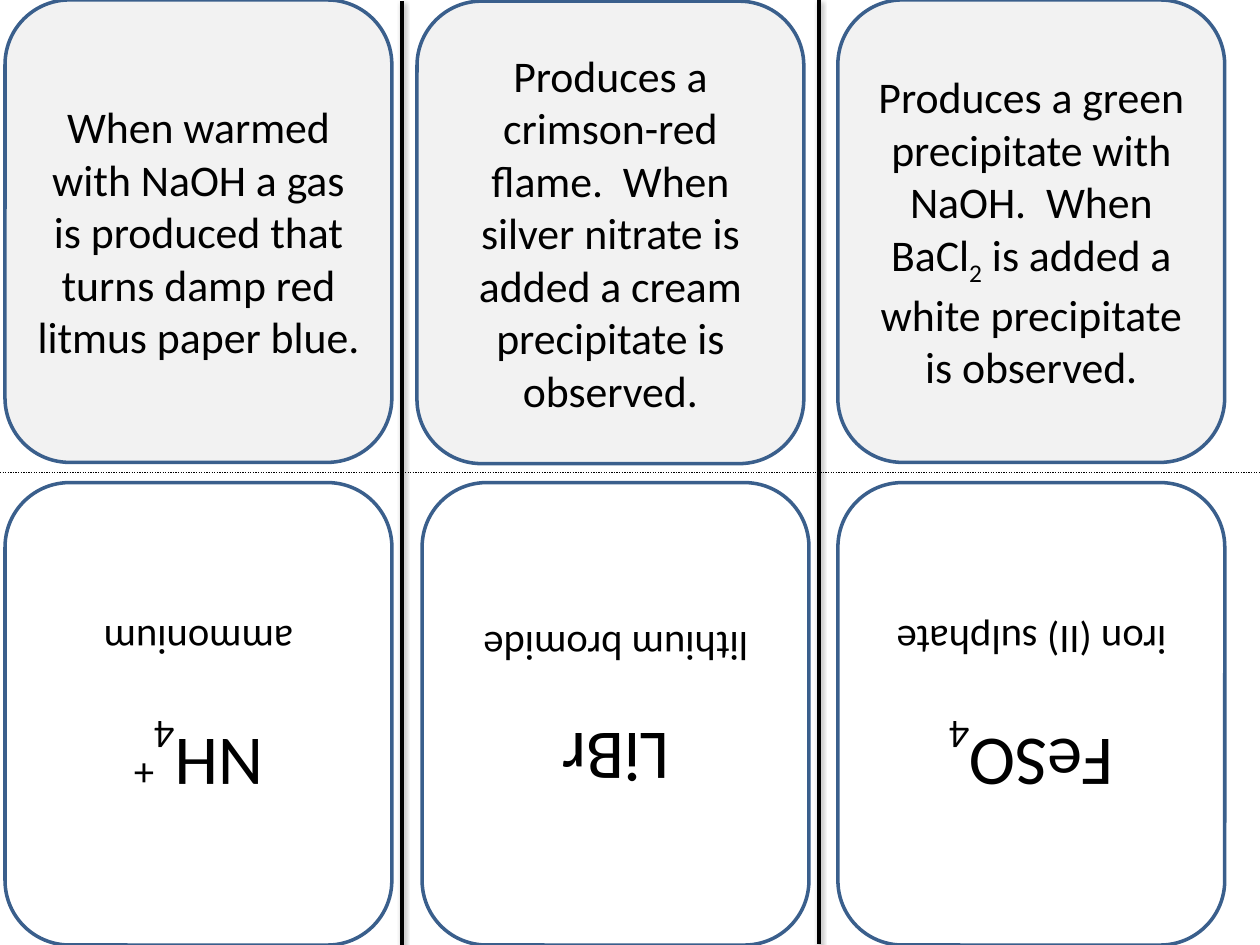
"""Build a sheet of fold-over chemistry cards: clues above, upside-down answers below."""
from dataclasses import dataclass
from typing import NamedTuple

from lxml import etree
from pptx import Presentation
from pptx import util as u
from pptx.dml.color import RGBColor
from pptx.enum import dml, shapes, text
from pptx.oxml import ns
from pptx.slide import Slide

BLACK = RGBColor(0x00, 0x00, 0x00)
WHITE = RGBColor(0xFF, 0xFF, 0xFF)
PALE_GREY = RGBColor(0xF2, 0xF2, 0xF2)
BORDER_BLUE = RGBColor(0x3A, 0x5F, 0x8C)

CARD_WIDTH, CARD_HEIGHT = 3.07, 3.67
ANSWER_TOP = 3.83
SUB, SUPER = -25, 30


class Piece(NamedTuple):
    wording: str
    baseline: int = 0


@dataclass(frozen=True)
class Card:
    left: float
    top: float
    size: int
    fill: RGBColor
    lines: list[list[Piece]]
    rotation: int = 0


@dataclass(frozen=True)
class Rule:
    start: tuple[float, float]
    end: tuple[float, float]
    width: float
    dotted: bool = False
    shadowed: bool = False


def clue(left: float, top: float, *pieces: Piece) -> Card:
    """Describe an upright grey card holding one paragraph."""
    return Card(left, top, 25, PALE_GREY, [list(pieces)])


def answer(left: float, name: str, *formula: Piece) -> Card:
    """Describe an upside-down white card with a formula above its name."""
    return Card(left, ANSWER_TOP, 40, WHITE, [list(formula), [Piece(name, SUB)]], 180)


CARDS = [
    clue(0.04, 0, Piece("When warmed with NaOH a gas is produced that turns damp red litmus paper blue.")),
    answer(0.04, "ammonium", Piece("NH"), Piece("4", SUB), Piece("+", SUPER)),
    clue(3.31, 0.01, Piece("Produces a crimson-red flame.  When silver nitrate is added "
                           "a cream precipitate is observed.")),
    answer(3.35, "lithium bromide", Piece("LiBr")),
    clue(6.65, 0, Piece("Produces a green precipitate with NaOH.  When BaCl"), Piece("2", SUB),
         Piece(" is added a white precipitate is observed.")),
    answer(6.65, "iron (II) sulphate", Piece("FeSO"), Piece("4", SUB)),
]

RULES = [
    Rule((0, 3.75), (10, 3.75), 0.75, dotted=True),
    Rule((3.19, 0.01), (3.19, 7.5), 2, shadowed=True),
    Rule((6.5, 0), (6.5, 7.49), 2, shadowed=True),
]


def draw_card(slide: Slide, card: Card) -> None:
    """Draw a rounded card with its centred text."""
    panel = slide.shapes.add_shape(
        shapes.MSO_SHAPE.ROUNDED_RECTANGLE,
        u.Inches(card.left), u.Inches(card.top), u.Inches(CARD_WIDTH), u.Inches(CARD_HEIGHT))
    panel.rotation = card.rotation
    panel.shadow.inherit = False
    panel.fill.solid()
    panel.fill.fore_color.rgb = card.fill
    panel.line.color.rgb = BORDER_BLUE
    panel.line.width = u.Pt(2)
    frame = panel.text_frame
    frame.word_wrap = True
    frame.vertical_anchor = text.MSO_ANCHOR.MIDDLE
    for index, pieces in enumerate(card.lines):
        line = frame.add_paragraph() if index else frame.paragraphs[0]
        line.alignment = text.PP_ALIGN.CENTER
        line.font.size = u.Pt(card.size)
        line.font.name = "Calibri"
        line.font.color.rgb = BLACK
        for piece in pieces:
            run = line.add_run()
            run.text = piece.wording
            if piece.baseline:
                run._r.get_or_add_rPr().set("baseline", str(piece.baseline * 1000))


def draw_rule(slide: Slide, rule: Rule) -> None:
    """Draw a straight fold or cut line, with a soft shadow where asked."""
    guide = slide.shapes.add_connector(
        shapes.MSO_CONNECTOR.STRAIGHT, *map(u.Inches, rule.start + rule.end))
    guide.line.color.rgb = BLACK
    guide.line.width = u.Pt(rule.width)
    if rule.dotted:
        guide.line.dash_style = dml.MSO_LINE.ROUND_DOT
    effects = etree.SubElement(guide._element.spPr, ns.qn("a:effectLst"))
    if rule.shadowed:
        shadow = etree.SubElement(
            effects, ns.qn("a:outerShdw"), blurRad=str(u.Pt(3.1)), dist=str(u.Pt(1.6)),
            dir=str(90 * 60000), rotWithShape="0")
        tint = etree.SubElement(shadow, ns.qn("a:srgbClr"), val=str(BLACK))
        etree.SubElement(tint, ns.qn("a:alpha"), val="38000")


def main() -> None:
    """Assemble the sheet and save it."""
    deck = Presentation()
    deck.slide_width, deck.slide_height = u.Inches(10), u.Inches(7.5)
    sheet = deck.slides.add_slide(deck.slide_layouts[6])
    for card in CARDS:
        draw_card(sheet, card)
    for rule in RULES:
        draw_rule(sheet, rule)
    deck.save("out.pptx")


if __name__ == "__main__":
    main()
